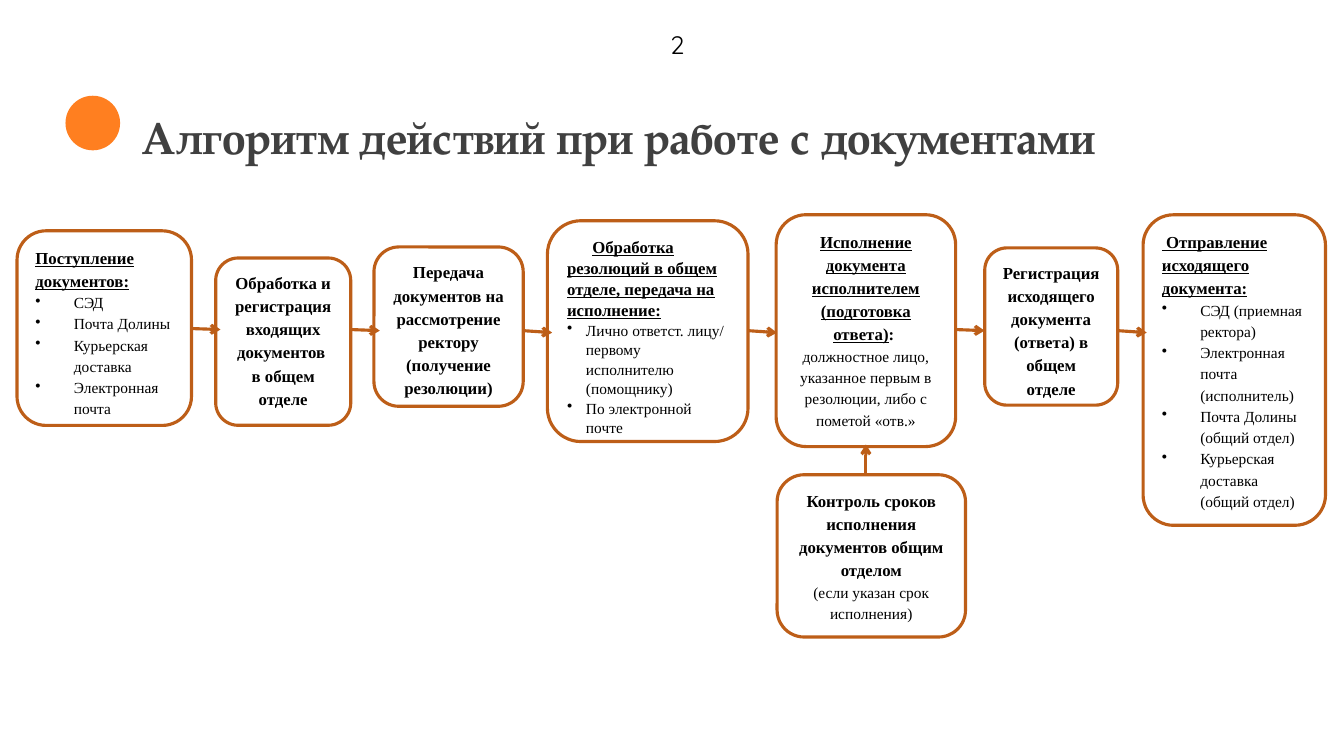
"""Build a slide with the steps of handling documents."""
import pptx
import pptx.dml.color
import pptx.enum.shapes
import pptx.enum.text
import pptx.oxml.ns
import pptx.util
from lxml import etree

Pt = pptx.util.Pt
RGB = pptx.dml.color.RGBColor
KIND = pptx.enum.shapes.MSO_SHAPE
ALIGN = pptx.enum.text.PP_ALIGN
qn = pptx.oxml.ns.qn

WHITE = RGB(255, 255, 255)
BLACK = RGB(0, 0, 0)
GREY = RGB(0x40, 0x40, 0x40)
ORANGE = RGB(0xFF, 0x7F, 0x20)
RUST = RGB(0xBD, 0x5E, 0x18)
SERIF = "Times New Roman"

TITLE = "Алгоритм действий при работе с документами"
PAGE = "2"

# style: size, bold, underline, alignment, bullet
STYLES = {
    "head": (12, True, True, ALIGN.LEFT, False),
    "name": (12, True, True, ALIGN.CENTER, False),
    "bold": (12, True, False, ALIGN.CENTER, False),
    "note": (11, False, False, ALIGN.CENTER, False),
    "item": (11, False, False, ALIGN.LEFT, True),
}
WIDE = (1.15, 27.4, 0)
TIGHT = (1.05, 13.5, 18)

STEPS = [
    ((12.2, 164.9, 124.6, 139), WIDE, [
        ("head", "Поступление документов:"),
        ("item", "СЭД"),
        ("item", "Почта Долины"),
        ("item", "Курьерская доставка"),
        ("item", "Электронная почта")]),
    ((154.1, 184.3, 96.5, 119.5), WIDE, [
        ("bold", "Обработка и регистрация входящих документов "),
        ("bold", "в общем отделе")]),
    ((267.1, 176.4, 106.6, 113.8), WIDE, [
        ("bold", "Передача документов на рассмотрение ректору (получение резолюции)")]),
    ((391, 157.7, 143.3, 157.7), TIGHT, [
        ("head", "Обработка резолюций в общем отделе, передача на исполнение:"),
        ("item", "Лично ответст. лицу/ первому исполнителю (помощнику)"),
        ("item", "По электронной почте")]),
    ((554.4, 153.4, 128.2, 165.6), WIDE, [
        ("name", "Исполнение документа исполнителем (подготовка ответа)", ": "),
        ("note", "должностное лицо, указанное первым в резолюции, либо с пометой «отв.»")]),
    ((703.4, 177.1, 95, 112.3), WIDE, [
        ("bold", "Регистрация исходящего документа (ответа) в общем отделе")]),
    ((816.5, 153.4, 130.3, 221.8), WIDE, [
        ("head", " Отправление исходящего документа:"),
        ("item", "СЭД (приемная ректора)"),
        ("item", "Электронная почта (исполнитель)"),
        ("item", "Почта Долины (общий отдел)"),
        ("item", "Курьерская доставка (общий отдел)")]),
]
CHECK = ((555.1, 339.1, 134.6, 115.9), WIDE, [
    ("bold", "Контроль сроков исполнения документов общим отделом"),
    ("note", "(если указан срок исполнения)")])

REACH = 20.7
LEVELS = [(234.7, 235.4), (235.4, 236.2), (236.2, 237.6),
          (236.2, 237.6), (235.4, 236.2), (236.2, 237.6)]
RISE = (618.5, 339.1, 618.5, 317.5)


def set_font(par, face, size, color, bold=False, under=False):
    font = par.font
    font.name, font.size, font.bold, font.underline = face, Pt(size), bold, under
    font.color.rgb = color


def add_line(par, form, style, text, *tail):
    space, hang, first = form
    size, bold, under, align, bullet = STYLES[style]
    par.alignment, par.line_spacing = align, space
    props = par._p.get_or_add_pPr()
    if bullet:
        props.set("marL", str(Pt(hang)))
        props.set("indent", str(Pt(-hang)))
        etree.SubElement(props, qn("a:buChar")).set("char", "•")
    elif first:
        props.set("indent", str(Pt(first)))
    set_font(par, SERIF, size, BLACK, bold, under)
    par.add_run().text = text
    for more in tail:
        run = par.add_run()
        run.text, run.font.underline = more, False


def add_shape(slide, kind, area, fill):
    shape = slide.shapes.add_shape(kind, *map(Pt, area))
    shape.shadow.inherit = False
    shape.fill.solid()
    shape.fill.fore_color.rgb = fill
    return shape


def add_step(slide, area, form, lines):
    shape = add_shape(slide, KIND.ROUNDED_RECTANGLE, area, WHITE)
    shape.line.color.rgb, shape.line.width = RUST, Pt(2.25)
    frame = shape.text_frame
    frame.word_wrap = True
    frame.vertical_anchor = pptx.enum.text.MSO_ANCHOR.TOP
    for i, line in enumerate(lines):
        par = frame.add_paragraph() if i else frame.paragraphs[0]
        add_line(par, form, *line)


def add_arrow(slide, *ends):
    link = slide.shapes.add_connector(
        pptx.enum.shapes.MSO_CONNECTOR.STRAIGHT, *map(Pt, ends))
    link.line.color.rgb, link.line.width = RUST, Pt(2.25)
    etree.SubElement(link.line._get_or_add_ln(), qn("a:tailEnd")).set("type", "arrow")
    etree.SubElement(link._element.spPr, qn("a:effectLst"))


def add_label(slide, area, text, *look):
    frame = slide.shapes.add_textbox(*map(Pt, area)).text_frame
    frame.word_wrap = True
    par = frame.paragraphs[0]
    par.add_run().text = text
    set_font(par, *look)


def main():
    deck = pptx.Presentation()
    deck.slide_width, deck.slide_height = Pt(960), Pt(540)
    slide = deck.slides.add_slide(deck.slide_layouts[6])
    dot = add_shape(slide, KIND.OVAL, (46.8, 68.4, 39, 39), ORANGE)
    dot.line.fill.background()
    add_label(slide, (95, 74.9, 860, 46), TITLE, "TeX Gyre Pagella", 32, GREY, True)
    for step in STEPS + [CHECK]:
        add_step(slide, *step)
    for (area, *_), (start, end) in zip(STEPS, LEVELS):
        edge = area[0] + area[2]
        add_arrow(slide, edge, start, edge + REACH, end)
    add_arrow(slide, *RISE)
    add_label(slide, (471.6, 17.3, 32.4, 28.8), PAGE, "Quicksand", 18, BLACK)
    deck.save("out.pptx")


if __name__ == "__main__":
    main()
